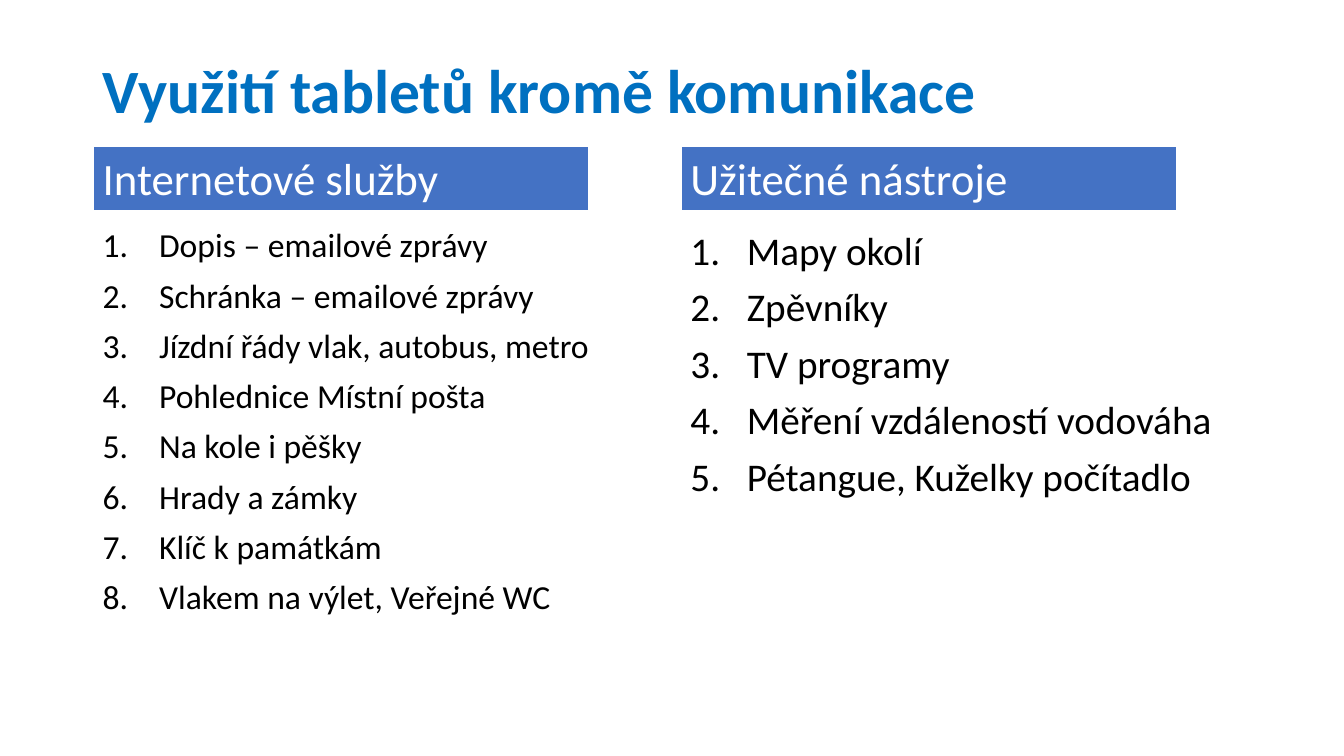
from dataclasses import dataclass

from lxml.etree import SubElement
from pptx import Presentation
from pptx.dml.color import RGBColor
from pptx.enum.shapes import MSO_SHAPE
from pptx.enum.text import MSO_ANCHOR, MSO_AUTO_SIZE, PP_ALIGN
from pptx.oxml.ns import qn
from pptx.util import Pt

PX = 9144


@dataclass(frozen=True)
class Theme:
    """Colours, font and type sizes of the slide."""
    font: str = "Calibri"
    heading: RGBColor = RGBColor(0x00, 0x70, 0xC0)
    banner: RGBColor = RGBColor(0x44, 0x72, 0xC4)
    white: RGBColor = RGBColor(0xFF, 0xFF, 0xFF)
    ink: RGBColor = RGBColor(0x00, 0x00, 0x00)
    heading_size: int = 44
    banner_size: int = 32
    long_list_size: int = 24
    short_list_size: int = 28


THEME = Theme()
BANNER_TOP, BANNER_WIDTH, BANNER_HEIGHT = 145, 492, 64
LIST_WIDTH, LIST_HEIGHT, NUMBER_INDENT = 567, 476, 56

COLUMNS = [
    {
        "left": 92,
        "list_top": 222,
        "size": THEME.long_list_size,
        "heading": "Internetové služby",
        "items": [
            "Dopis – emailové zprávy",
            "Schránka – emailové zprávy",
            "Jízdní řády vlak, autobus, metro",
            "Pohlednice Místní pošta",
            "Na kole i pěšky",
            "Hrady a zámky",
            "Klíč k památkám",
            "Vlakem na výlet, Veřejné WC",
        ],
    },
    {
        "left": 675,
        "list_top": 225,
        "size": THEME.short_list_size,
        "heading": "Užitečné nástroje",
        "items": [
            "Mapy okolí",
            "Zpěvníky",
            "TV programy",
            "Měření vzdáleností vodováha",
            "Pétangue, Kuželky počítadlo",
        ],
    },
]


def px(*lengths):
    """Turn pixel lengths into EMU."""
    return [length * PX for length in lengths]


def apply(target, values):
    """Set each named attribute on the target."""
    for name, value in values.items():
        setattr(target, name, value)


def write(paragraph, wording, size, color, bold=False, **layout):
    """Write one formatted run into a paragraph."""
    apply(paragraph, {"alignment": PP_ALIGN.LEFT, **layout})
    run = paragraph.add_run()
    run.text = wording
    apply(run.font, {"name": THEME.font, "size": Pt(size), "bold": bold})
    run.font.color.rgb = color


def number(paragraph):
    """Give a paragraph an automatic number and a hanging indent."""
    properties = paragraph._p.get_or_add_pPr()
    indent, = px(NUMBER_INDENT)
    properties.set("marL", str(indent))
    properties.set("indent", str(-indent))
    SubElement(properties, qn("a:buFont"), typeface="+mj-lt")
    SubElement(properties, qn("a:buAutoNum"), type="arabicPeriod")


def set_title(slide, wording):
    """Place and format the slide title."""
    title = slide.shapes.title
    left, top, width, height = px(92, 40, 1067, 105)
    apply(title, {"left": left, "top": top, "width": width, "height": height})
    apply(title.text_frame, {"vertical_anchor": MSO_ANCHOR.MIDDLE,
                             "auto_size": MSO_AUTO_SIZE.NONE,
                             "word_wrap": True})
    write(title.text_frame.paragraphs[0], wording, THEME.heading_size,
          THEME.heading, bold=True, line_spacing=0.9)


def add_banner(slide, left, heading):
    """Add the filled heading bar above a list."""
    banner = slide.shapes.add_shape(
        MSO_SHAPE.RECTANGLE, *px(left, BANNER_TOP, BANNER_WIDTH, BANNER_HEIGHT))
    banner.shadow.inherit = False
    banner.fill.solid()
    banner.fill.fore_color.rgb = THEME.banner
    banner.line.color.rgb = THEME.white
    banner.line.width = Pt(1.5)
    apply(banner.text_frame, {"vertical_anchor": MSO_ANCHOR.TOP,
                              "auto_size": MSO_AUTO_SIZE.SHAPE_TO_FIT_TEXT,
                              "word_wrap": True})
    write(banner.text_frame.paragraphs[0], heading, THEME.banner_size, THEME.white)


def add_numbered_list(slide, left, top, items, size):
    """Add a numbered list with even spacing."""
    frame = slide.shapes.add_textbox(
        *px(left, top, LIST_WIDTH, LIST_HEIGHT)).text_frame
    frame.word_wrap = True
    for index, item in enumerate(items):
        paragraph = frame.add_paragraph() if index else frame.paragraphs[0]
        number(paragraph)
        write(paragraph, item, size, THEME.ink, line_spacing=0.9,
              space_before=Pt(10 if index else 0))


def main():
    """Build and save the slide."""
    deck = Presentation()
    deck.slide_width, deck.slide_height = px(1333, 750)
    slide = deck.slides.add_slide(deck.slide_layouts[5])
    set_title(slide, "Využití tabletů kromě komunikace")
    for column in COLUMNS:
        add_banner(slide, column["left"], column["heading"])
        add_numbered_list(slide, column["left"], column["list_top"],
                          column["items"], column["size"])
    deck.save("out.pptx")


if __name__ == "__main__":
    main()
